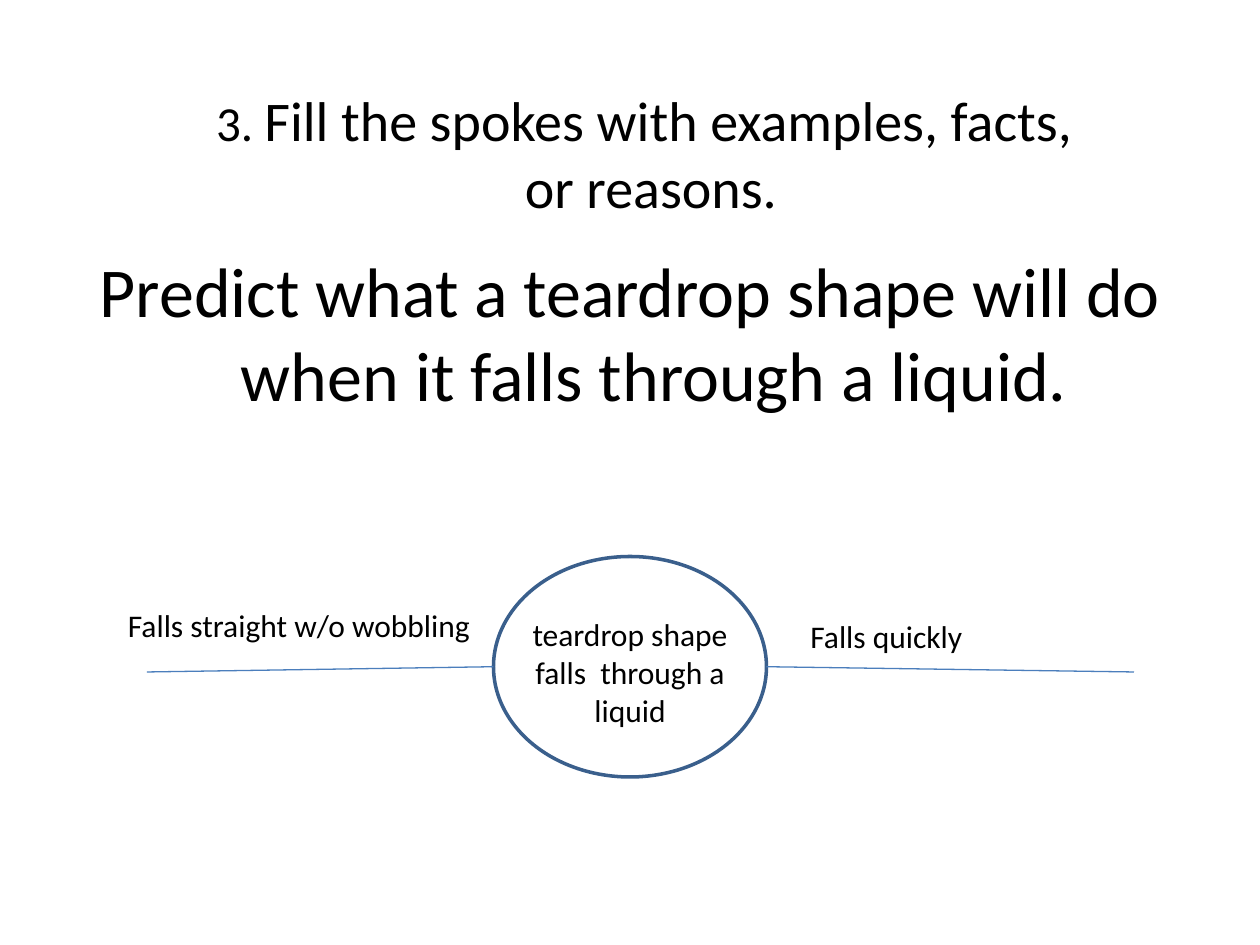
from pptx import Presentation
from pptx.dml.color import RGBColor
from pptx.enum.shapes import MSO_CONNECTOR as Connector, MSO_SHAPE as Shape
from pptx.enum.text import MSO_ANCHOR as Anchor, MSO_AUTO_SIZE as AutoSize, PP_ALIGN as Align
from pptx.oxml.ns import qn
from pptx.util import Inches, Pt
from lxml import etree

BLACK = RGBColor(0x00, 0x00, 0x00)
HUB_BLUE = RGBColor(0x3A, 0x5F, 0x8C)
SPOKE_BLUE = RGBColor(0x4B, 0x7E, 0xBC)


class SpokeSlide:
    font_name = "Calibri"
    columns, rows = 120, 90

    def __init__(self, presentation):
        self.slide = presentation.slides.add_slide(presentation.slide_layouts[6])
        self.column = presentation.slide_width / self.columns
        self.row = presentation.slide_height / self.rows

    def place(self, left, top, width, height):
        return [round(length) for length in (left * self.column, top * self.row,
                                             width * self.column, height * self.row)]

    def text(self, area, lines, align=Align.CENTER, anchor=Anchor.TOP,
             wrap=True, grow=False, hanging=0):
        box = self.slide.shapes.add_textbox(*self.place(*area))
        frame = box.text_frame
        frame.word_wrap = wrap
        frame.auto_size = AutoSize.SHAPE_TO_FIT_TEXT if grow else AutoSize.NONE
        frame.vertical_anchor = anchor
        paragraph = frame.paragraphs[0]
        paragraph.alignment = align
        paragraph.font.name = self.font_name
        paragraph.font.color.rgb = BLACK
        if hanging:
            properties = paragraph._p.get_or_add_pPr()
            properties.set("marL", str(Inches(hanging)))
            properties.set("indent", str(Inches(-hanging)))
        for index, line in enumerate(lines):
            if index:
                paragraph.add_line_break()
            for words, size in line:
                run = paragraph.add_run()
                run.text = words
                run.font.size = Pt(size)

    def label(self, area, words):
        self.text(area, [[(words, 18)]], align=Align.LEFT, wrap=False, grow=True)

    def hub(self, area):
        shape = self.slide.shapes.add_shape(Shape.OVAL, *self.place(*area))
        shape.shadow.inherit = False
        shape.fill.background()
        shape.line.color.rgb = HUB_BLUE
        shape.line.width = Pt(2)

    def spoke(self, start, end):
        spoke = self.slide.shapes.add_connector(
            Connector.STRAIGHT, *self.place(*start, *end))
        spoke.line.color.rgb = SPOKE_BLUE
        spoke.line.width = Pt(0.75)
        etree.SubElement(spoke._element.spPr, qn("a:effectLst"))


def main():
    presentation = Presentation()
    presentation.slide_width = Inches(10)
    presentation.slide_height = Inches(7.5)
    page = SpokeSlide(presentation)

    page.text((16, 7, 92, 15),
              [[("3. ", 28), ("Fill the spokes with examples, facts, ", 32)],
               [("or reasons.", 32)]], anchor=Anchor.MIDDLE)
    page.text((6, 23, 108, 20),
              [[("Predict what a teardrop shape will do when it falls through a liquid.", 40)]],
              hanging=0.38)

    page.hub((47, 53, 26, 21))
    page.text((49, 58, 22, 12.1), [[("teardrop shape falls  through a liquid", 18)]], grow=True)
    page.spoke((73, 63.5), (108, 64))
    page.spoke((47, 63.5), (14, 64))
    page.label((11, 57.1, 35.4, 4.8), "Falls straight w/o wobbling")
    page.label((76, 58.2, 17, 4.8), "Falls quickly")

    presentation.save("out.pptx")


if __name__ == "__main__":
    main()
